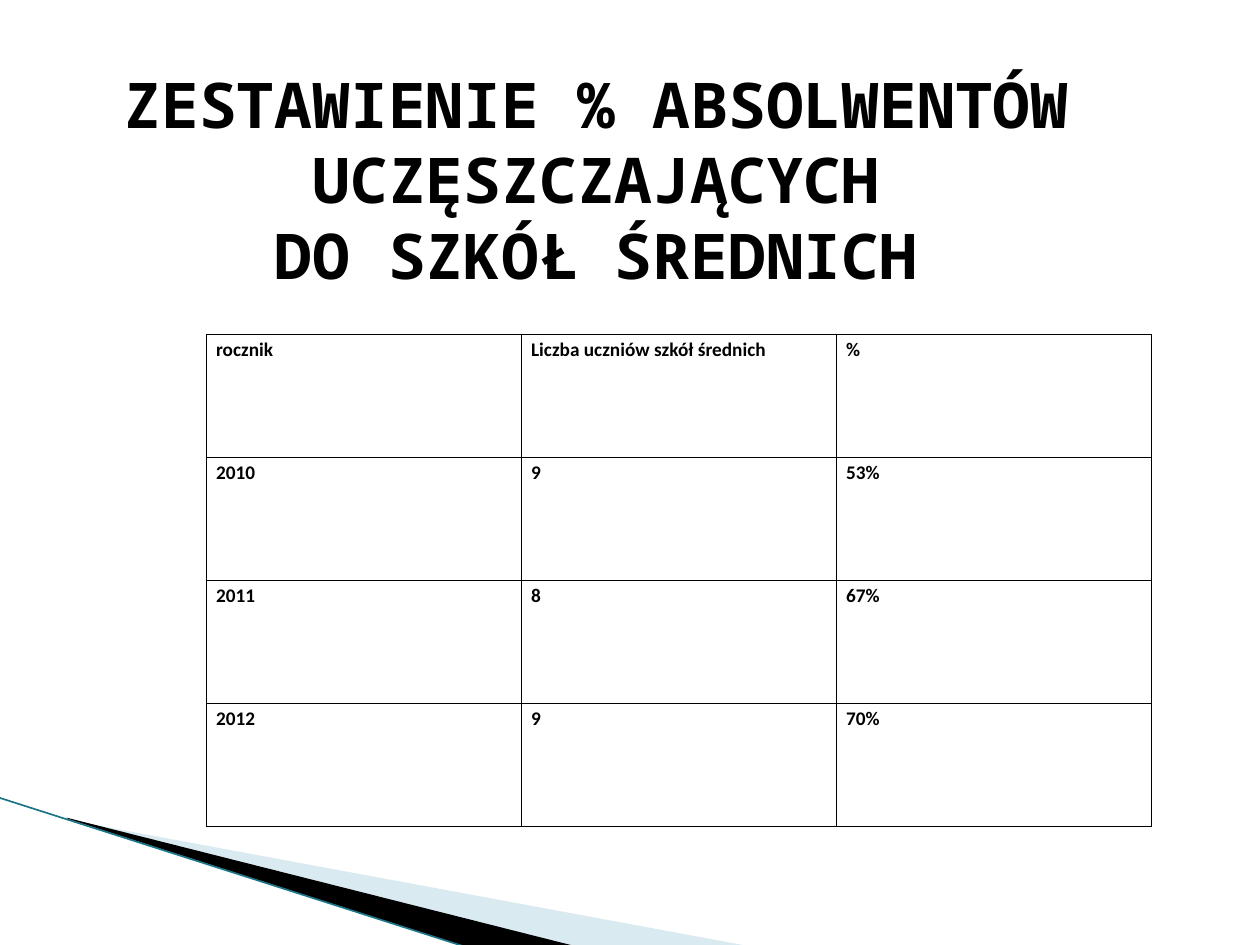
from dataclasses import dataclass

from lxml.etree import SubElement
from pptx import Presentation
from pptx.dml.color import RGBColor
from pptx.enum.text import MSO_ANCHOR, MSO_AUTO_SIZE, PP_ALIGN
from pptx.enum.shapes import MSO_CONNECTOR
from pptx.oxml import parse_xml
from pptx.oxml.ns import nsdecls, qn
from pptx.util import Inches, Pt

WIDTH, HEIGHT = Inches(10), Inches(7.5)
BLACK = RGBColor(0x00, 0x00, 0x00)
PALE_BLUE = RGBColor(0xA0, 0xCB, 0xDC)
TEAL = RGBColor(0x1B, 0x75, 0x87)

TITLE_LINES = ["ZESTAWIENIE % ABSOLWENTÓW", "UCZĘSZCZAJĄCYCH", "DO SZKÓŁ ŚREDNICH"]
TITLE_FONT = {"name": "Noto Sans Mono", "size": Pt(36), "bold": True}
CELL_FONT = {"name": "Calibri", "size": Pt(11), "bold": True}
CELL_FORMAT = {"margin_left": Pt(5.4), "margin_right": Pt(5.4),
               "margin_top": 0, "margin_bottom": 0,
               "vertical_anchor": MSO_ANCHOR.TOP}
ROWS = [
    ("rocznik", "Liczba uczniów szkół średnich", "%"),
    ("2010", "9", "53%"),
    ("2011", "8", "67%"),
    ("2012", "9", "70%"),
]
COLUMN_WIDTH, ROW_HEIGHT = Inches(2.5), Pt(70.3)


@dataclass(frozen=True)
class Wedge:
    """A filled outline and its frame (left, top, width, height) in inches."""
    points: tuple[tuple[float, float], ...]
    frame: tuple[float, float, float, float]
    color: RGBColor
    opacity: int = 100


WEDGES = [
    Wedge(((0.55, 6.51), (5.95, 7.51), (4.56, 7.51), (0.55, 6.5)),
          (0.78, 5.47, 4.16, 1.58), PALE_BLUE, 40),
    Wedge(((0.53, 6.49), (4.57, 7.51), (3.72, 7.52), (0.54, 6.5)),
          (-0.06, 6.33, 4.16, 0.92), BLACK),
]


def apply_format(target, values: dict) -> None:
    for name, value in values.items():
        setattr(target, name, value)


def format_font(font, values: dict) -> None:
    apply_format(font, values)
    font.color.rgb = BLACK


def reframe(shape, frame: tuple[float, float, float, float]) -> None:
    """Give the shape a new frame while its outline stays in place."""
    left, top, width, height = map(Inches, frame)
    path = shape._element.spPr.find(f".//{qn('a:path')}")
    for point in path.iter(qn("a:pt")):
        point.set("x", str(int(point.get("x")) + shape.left - left))
        point.set("y", str(int(point.get("y")) + shape.top - top))
    path.set("w", str(width))
    path.set("h", str(height))
    apply_format(shape, {"left": left, "top": top, "width": width, "height": height})


def draw_wedge(slide, wedge: Wedge) -> None:
    start, *rest = [(Inches(x), Inches(y)) for x, y in wedge.points]
    builder = slide.shapes.build_freeform(*start)
    builder.add_line_segments(rest, close=True)
    shape = builder.convert_to_shape()
    reframe(shape, wedge.frame)
    shape.shadow.inherit = False
    shape.line.fill.background()
    shape.fill.solid()
    shape.fill.fore_color.rgb = wedge.color
    if wedge.opacity < 100:
        color = shape.fill._xPr.find(qn("a:solidFill"))[0]
        SubElement(color, qn("a:alpha"), val=str(wedge.opacity * 1000))


def draw_edge(slide) -> None:
    edge = slide.shapes.add_connector(
        MSO_CONNECTOR.STRAIGHT, Inches(-0.01), Inches(6.33), Inches(3.71), Inches(7.52))
    edge.line.color.rgb = TEAL
    edge.line.width = Pt(0.95)
    SubElement(edge._element.spPr, qn("a:effectLst"))


def write_title(slide) -> None:
    title = slide.shapes.title
    apply_format(title, {"left": Inches(0.55), "top": Pt(33.6),
                         "width": Inches(8.36), "height": Inches(1.92)})
    frame = title.text_frame
    frame.text = "\n".join(TITLE_LINES)
    apply_format(frame, {"word_wrap": True, "vertical_anchor": MSO_ANCHOR.TOP,
                         "auto_size": MSO_AUTO_SIZE.SHAPE_TO_FIT_TEXT})
    for paragraph in frame.paragraphs:
        apply_format(paragraph, {"alignment": PP_ALIGN.CENTER, "space_before": Pt(0)})
        format_font(paragraph.runs[0].font, TITLE_FONT)


def add_borders(cell) -> None:
    properties = cell._tc.get_or_add_tcPr()
    for index, side in enumerate("LRTB"):
        properties.insert(index, parse_xml(
            f'<a:ln{side} {nsdecls("a")} w="{Pt(1)}"><a:solidFill>'
            f'<a:srgbClr val="{BLACK}"/></a:solidFill></a:ln{side}>'))


def fill_cell(cell, text: str) -> None:
    cell.text = text
    apply_format(cell, CELL_FORMAT)
    cell.fill.background()
    add_borders(cell)
    paragraph = cell.text_frame.paragraphs[0]
    paragraph.line_spacing = 1.15
    format_font(paragraph.runs[0].font, CELL_FONT)


def draw_table(slide) -> None:
    row_count, column_count = len(ROWS), len(ROWS[0])
    table = slide.shapes.add_table(
        row_count, column_count, Inches(1.64), Pt(191.2),
        COLUMN_WIDTH * column_count, ROW_HEIGHT * row_count).table
    apply_format(table, {"first_row": False, "horz_banding": False})
    for row_index, texts in enumerate(ROWS):
        for column_index, text in enumerate(texts):
            fill_cell(table.cell(row_index, column_index), text)


def main() -> None:
    presentation = Presentation()
    apply_format(presentation, {"slide_width": WIDTH, "slide_height": HEIGHT})
    slide = presentation.slides.add_slide(presentation.slide_layouts[5])
    for wedge in WEDGES:
        draw_wedge(slide, wedge)
    draw_edge(slide)
    draw_table(slide)
    write_title(slide)
    presentation.save("out.pptx")


if __name__ == "__main__":
    main()
